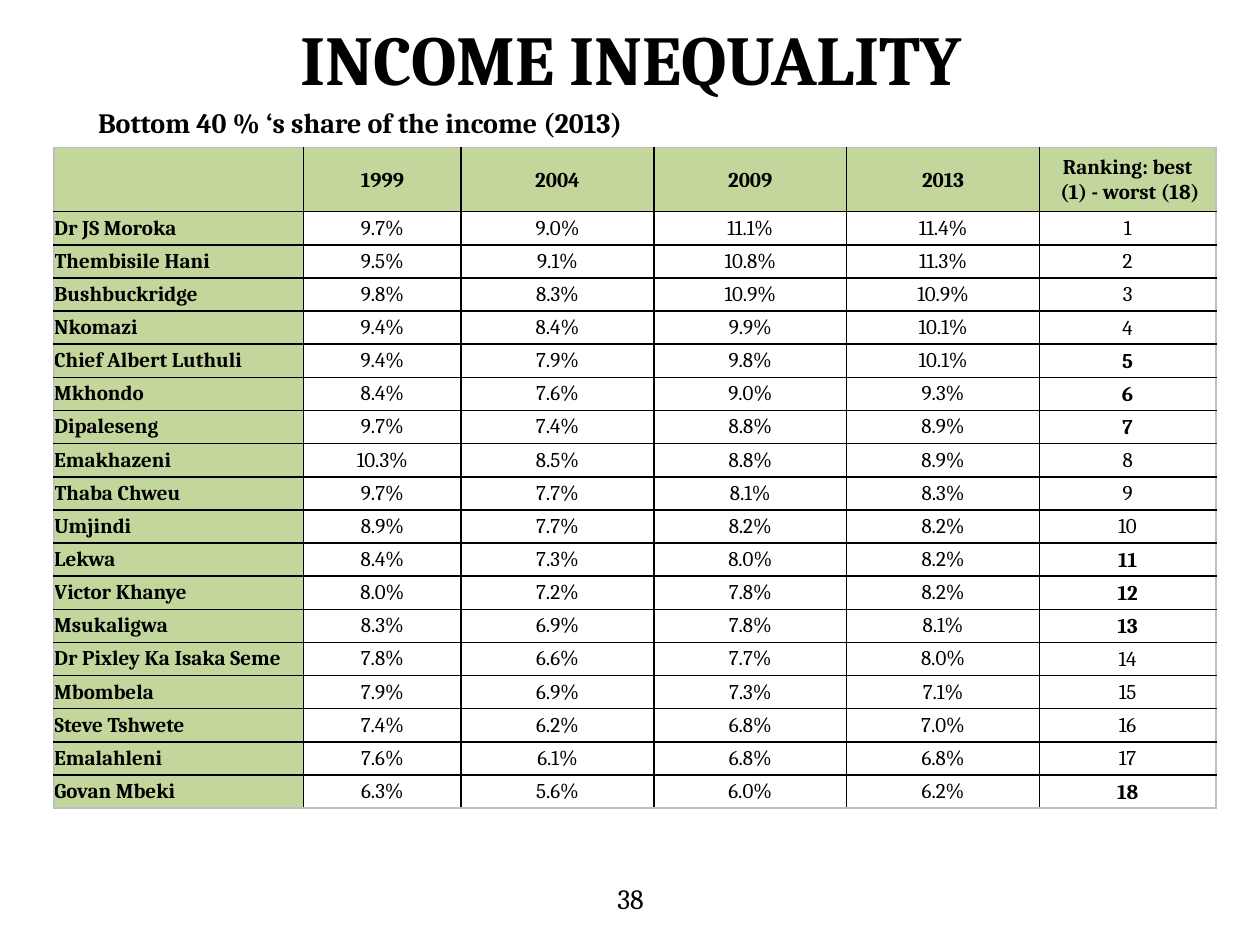
from pptx import Presentation
from pptx.dml.color import RGBColor
from pptx.enum.text import MSO_ANCHOR, PP_ALIGN
from pptx.oxml.ns import qn
from pptx.util import Inches, Pt
from lxml.etree import SubElement

SLIDE_WIDTH, SLIDE_HEIGHT = Inches(10), Inches(7.5)
FONT = "Cambria"
COLORS = {"text": "000000", "label": "C3D69B", "value": "FFFFFF",
          "grid": "000000", "frame": "BFBFBF"}

# Table lengths in percent of the slide's width or height
COLUMN_SHARES = [19.8, 12.5, 15.3, 15.3, 15.3, 14]
TABLE_SHARE, HEADER_SHARE = 70, 6.8

HEADER = ["", "1999", "2004", "2009", "2013", "Ranking: best\n (1) - worst (18)"]
MUNICIPALITIES = [
    ("Dr JS Moroka", "9.7%", "9.0%", "11.1%", "11.4%"),
    ("Thembisile Hani", "9.5%", "9.1%", "10.8%", "11.3%"),
    ("Bushbuckridge", "9.8%", "8.3%", "10.9%", "10.9%"),
    ("Nkomazi", "9.4%", "8.4%", "9.9%", "10.1%"),
    ("Chief Albert Luthuli", "9.4%", "7.9%", "9.8%", "10.1%"),
    ("Mkhondo", "8.4%", "7.6%", "9.0%", "9.3%"),
    ("Dipaleseng", "9.7%", "7.4%", "8.8%", "8.9%"),
    ("Emakhazeni", "10.3%", "8.5%", "8.8%", "8.9%"),
    ("Thaba Chweu", "9.7%", "7.7%", "8.1%", "8.3%"),
    ("Umjindi", "8.9%", "7.7%", "8.2%", "8.2%"),
    ("Lekwa", "8.4%", "7.3%", "8.0%", "8.2%"),
    ("Victor Khanye", "8.0%", "7.2%", "7.8%", "8.2%"),
    ("Msukaligwa", "8.3%", "6.9%", "7.8%", "8.1%"),
    ("Dr Pixley Ka Isaka Seme", "7.8%", "6.6%", "7.7%", "8.0%"),
    ("Mbombela", "7.9%", "6.9%", "7.3%", "7.1%"),
    ("Steve Tshwete", "7.4%", "6.2%", "6.8%", "7.0%"),
    ("Emalahleni", "7.6%", "6.1%", "6.8%", "6.8%"),
    ("Govan Mbeki", "6.3%", "5.6%", "6.0%", "6.2%"),
]
BOLD_RANKS = {5, 6, 7, 11, 12, 13, 18}


def across(percent):
    return int(SLIDE_WIDTH * percent / 100)


def down(percent):
    return int(SLIDE_HEIGHT * percent / 100)


def write(frame, text, size, bold, align):
    """Fill a text frame, one paragraph per line of text."""
    for number, line in enumerate(text.split("\n")):
        paragraph = frame.add_paragraph() if number else frame.paragraphs[0]
        paragraph.alignment = align
        run = paragraph.add_run()
        run.text = line
        run.font.name = FONT
        run.font.size = Pt(size)
        run.font.bold = bold
        run.font.color.rgb = RGBColor.from_string(COLORS["text"])


def add_text(slide, box, text, size, bold=True, align=PP_ALIGN.CENTER,
             anchor=MSO_ANCHOR.MIDDLE):
    """Place a line of text; box is left, top, width, height in percent."""
    left, top, width, height = box
    frame = slide.shapes.add_textbox(across(left), down(top),
                                     across(width), down(height)).text_frame
    frame.word_wrap = True
    frame.vertical_anchor = anchor
    write(frame, text, size, bold, align)


def set_borders(cell, sides):
    """Draw 1 pt borders; sides maps L, R, T, B to colour names."""
    properties = cell._tc.get_or_add_tcPr()
    for position, side in enumerate("LRTB"):
        line = SubElement(properties, qn(f"a:ln{side}"), w=str(Pt(1)))
        fill = SubElement(line, qn("a:solidFill"))
        SubElement(fill, qn("a:srgbClr"), val=COLORS[sides[side]])
        properties.remove(line)
        properties.insert(position, line)


def style_cell(cell, fill, inset):
    cell.fill.solid()
    cell.fill.fore_color.rgb = RGBColor.from_string(COLORS[fill])
    cell.vertical_anchor = MSO_ANCHOR.MIDDLE
    cell.margin_left = cell.margin_right = cell.margin_top = Inches(inset)
    cell.margin_bottom = 0


def add_income_table(slide):
    rows = [HEADER] + [(*shares, str(rank))
                       for rank, shares in enumerate(MUNICIPALITIES, 1)]
    last_row, last_column = len(rows) - 1, len(HEADER) - 1
    table = slide.shapes.add_table(
        len(rows), len(HEADER), across(4.3), down(15.6),
        across(sum(COLUMN_SHARES)), down(TABLE_SHARE)).table
    table.horz_banding = False

    for column, share in zip(table.columns, COLUMN_SHARES):
        column.width = across(share)
    body_share = (TABLE_SHARE - HEADER_SHARE) / last_row
    for r, row in enumerate(table.rows):
        row.height = down(body_share if r else HEADER_SHARE)

    for r, values in enumerate(rows):
        for c, value in enumerate(values):
            cell = table.cell(r, c)
            is_label = r == 0 or c == 0
            is_rank = c == last_column
            style_cell(cell, "label" if is_label else "value",
                       0.01 if r == 0 or is_rank else 0)
            set_borders(cell, {
                "L": "grid" if c else "frame",
                "R": "frame" if c == last_column else "grid",
                "T": "grid" if r else "frame",
                "B": "frame" if r == last_row else "grid"})
            if value:
                write(cell.text_frame, value, 12,
                      is_label or (is_rank and r in BOLD_RANKS),
                      PP_ALIGN.CENTER if c else PP_ALIGN.LEFT)


def main():
    deck = Presentation()
    deck.slide_width, deck.slide_height = SLIDE_WIDTH, SLIDE_HEIGHT
    slide = deck.slides.add_slide(deck.slide_layouts[6])
    add_text(slide, (5.1, 0, 90, 12.27), "INCOME INEQUALITY", 40)
    add_income_table(slide)
    add_text(slide, (6.8, 11.33, 90, 3.2),
             "Bottom 40 % ‘s share of the income (2013)", 16, align=PP_ALIGN.LEFT)
    add_text(slide, (34.2, 92.67, 31.7, 5.33), "38", 16, bold=False,
             anchor=MSO_ANCHOR.TOP)
    deck.save("out.pptx")


if __name__ == "__main__":
    main()
